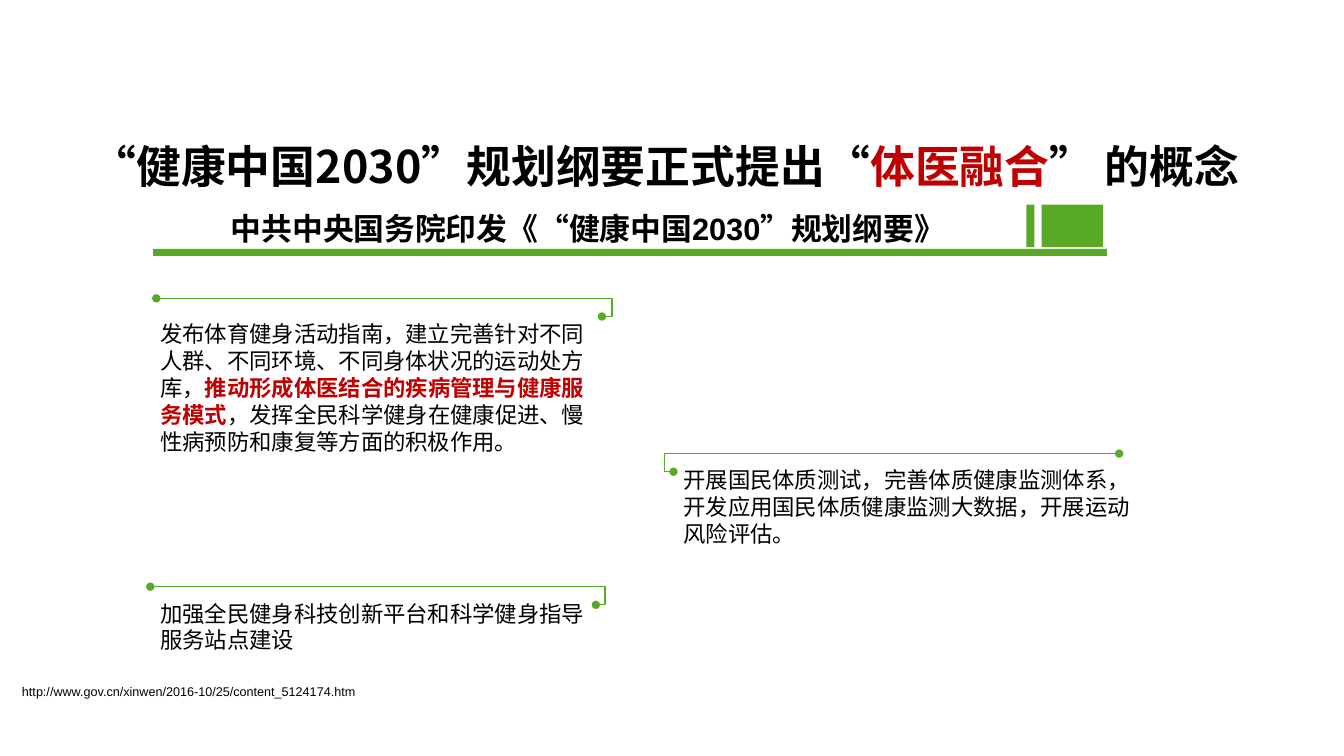
from lxml import etree
from pptx import Presentation
from pptx.dml.color import RGBColor
from pptx.enum.shapes import MSO_SHAPE
from pptx.enum.text import MSO_ANCHOR, PP_ALIGN
from pptx.oxml.ns import qn
from pptx.util import Inches, Pt

RECTANGLE = MSO_SHAPE.RECTANGLE
TOP, MIDDLE = MSO_ANCHOR.TOP, MSO_ANCHOR.MIDDLE
LEFT, CENTER = PP_ALIGN.LEFT, PP_ALIGN.CENTER

COLORS = {"green": "58A926", "black": "000000", "red": "C00000"}
CHINESE_FONT = "Noto Sans CJK SC"


class SlideBuilder:
    def __init__(self, page):
        self.page = page

    def color(self, name):
        return RGBColor.from_string(COLORS[name])

    def bar(self, left, top, width, height):
        bar = self.page.shapes.add_shape(
            RECTANGLE, Inches(left), Inches(top), Inches(width), Inches(height))
        bar.shadow.inherit = False
        bar.fill.solid()
        bar.fill.fore_color.rgb = self.color("green")
        bar.line.fill.background()

    def bracket(self, start, top, corner, hook):
        """Draw a line that turns down at the corner and hooks back, with dots at both ends."""
        bottom = top + 0.18
        points = [(start, top), (corner, top), (corner, bottom), (hook, bottom)]
        points = [(Inches(x), Inches(y)) for x, y in points]
        outline = self.page.shapes.build_freeform(*points[0])
        outline.add_line_segments(points[1:], close=False)
        bracket = outline.convert_to_shape()
        bracket.shadow.inherit = False
        bracket.fill.background()
        bracket.line.color.rgb = self.color("green")
        bracket.line.width = Pt(1)
        line = bracket.line.fill._xPr
        for end in ("a:headEnd", "a:tailEnd"):
            etree.SubElement(line, qn(end), type="oval")

    def text(self, place, spans, size, font="Calibri", bold=False,
             anchor=TOP, align=LEFT, spacing=1.0):
        """Add a wrapped box; each span is (text, color name, bold or None for the box default)."""
        box = self.page.shapes.add_textbox(*(Inches(length) for length in place))
        frame = box.text_frame
        frame.word_wrap = True
        frame.vertical_anchor = anchor
        para = frame.paragraphs[0]
        para.alignment = align
        para.line_spacing = spacing
        for words, color, strong in spans:
            span = para.add_run()
            span.text = words
            style = {"size": Pt(size), "name": font,
                     "bold": bold if strong is None else strong}
            for key, value in style.items():
                setattr(span.font, key, value)
            span.font.color.rgb = self.color(color)
            etree.SubElement(span.font._element, qn("a:ea"), typeface=CHINESE_FONT)


def main():
    deck = Presentation()
    deck.slide_width, deck.slide_height = Inches(13.33), Inches(7.5)
    slide = SlideBuilder(deck.slides.add_slide(deck.slide_layouts[6]))

    slide.text((0, 1.24, 13.2, 0.87), [
        ("“健康中国2030”规划纲要正式提出“", "black", None),
        ("体医融合", "red", None),
        ("” 的概念", "black", None),
    ], 32, CHINESE_FONT, True, MIDDLE, CENTER, 0.9)

    slide.bar(1.52, 2.47, 9.46, 0.07)
    for left, width in [(10.33, 0.61), (10.18, 0.08)]:
        slide.bar(left, 2.03, width, 0.42)
    slide.text((2.19, 2.03, 8.08, 0.47),
               [("中共中央国务院印发《“健康中国2030”规划纲要》", "black", None)],
               22, "Arial", True)

    for bracket in [(1.55, 2.96, 6.07, 5.97),
                    (1.49, 5.82, 6.0, 5.91),
                    (11.1, 4.5, 6.59, 6.68)]:
        slide.bracket(*bracket)

    measures = [
        ((1.49, 3.13, 4.43, 1.45), [
            ("发布体育健身活动指南，建立完善针对不同人群、不同环境、不同身体状况的运动处方库，",
             "black", None),
            ("推动形成体医结合的疾病管理与健康服务模式", "red", True),
            ("，发挥全民科学健身在健康促进、慢性病预防和康复等方面的积极作用。", "black", None),
        ]),
        ((1.49, 5.9, 4.43, 0.64),
         [("加强全民健身科技创新平台和科学健身指导服务站点建设", "black", None)]),
        ((6.68, 4.58, 4.67, 0.91),
         [("开展国民体质测试，完善体质健康监测体系，开发应用国民体质健康监测大数据，开展运动风险评估。",
           "black", None)]),
    ]
    for place, spans in measures:
        slide.text(place, spans, 16)

    slide.text((0.12, 6.74, 4.74, 0.25),
               [("http://www.gov.cn/xinwen/2016-10/25/content_5124174.htm", "black", None)],
               9, "Arial")
    deck.save("out.pptx")


if __name__ == "__main__":
    main()
